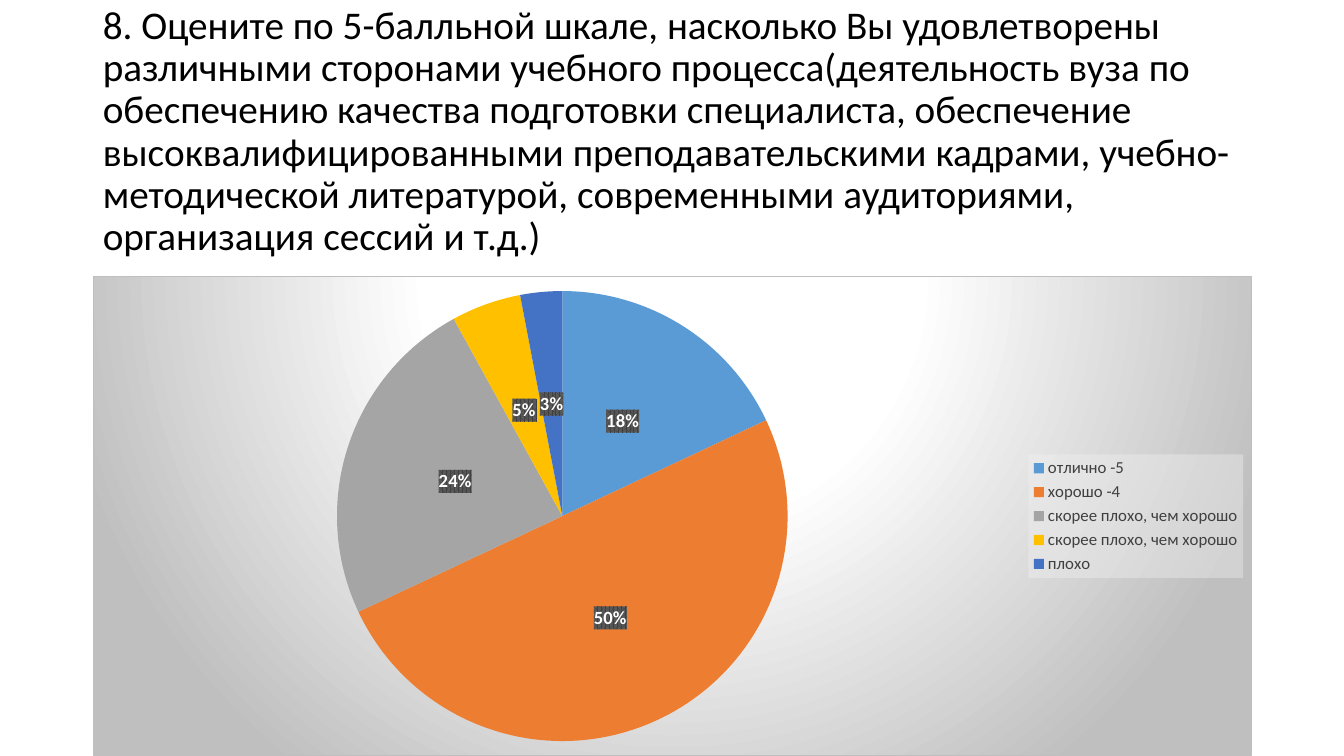
import dataclasses

import pptx
import pptx.chart.data
import pptx.dml.color
import pptx.enum.chart
import pptx.enum.text
import pptx.oxml
import pptx.oxml.ns
import pptx.util

Pt = pptx.util.Pt


@dataclasses.dataclass(frozen=True)
class Theme:
    font: str = "Calibri"
    text: str = "000000"
    legend_text: str = "404040"
    label_text: str = "FFFFFF"
    label_dark: str = "404040"
    label_light: str = "595959"
    legend_fill: str = "F2F2F2"
    panel_light: str = "FFFFFF"
    panel_dark: str = "BFBFBF"
    slices: tuple = ("5B9BD5", "ED7D31", "A5A5A5", "FFC000", "4472C4")
    title_size: float = 28
    chart_size: float = 10
    legend_size: float = 12
    label_size: float = 13.3


THEME = Theme()
LEFT, WIDTH = 66.24, 828
QUESTION = (
    "8. Оцените по 5-балльной шкале, насколько Вы удовлетворены различными "
    "сторонами учебного процесса(деятельность вуза по обеспечению качества "
    "подготовки специалиста, обеспечение высоквалифицированными "
    "преподавательскими кадрами, учебно-методической литературой, "
    "современными аудиториями, организация сессий и т.д.)"
)
ANSWERS = (
    ("отлично -5", 18),
    ("хорошо -4", 50),
    ("скорее плохо, чем хорошо", 24),
    ("скорее плохо, чем хорошо", 5),
    ("плохо", 3),
)


def rgb(color):
    return pptx.dml.color.RGBColor.from_string(color)


def style_font(font, size, color, bold=False):
    font.name = THEME.font
    font.size = Pt(size)
    font.bold = bold
    font.color.rgb = rgb(color)


def write_text(frame, text, *, size, color, align, line_spacing):
    para = frame.paragraphs[0]
    para.alignment = align
    para.line_spacing = line_spacing
    para.space_before = Pt(0)
    span = para.add_run()
    span.text = text
    style_font(span.font, size, color)


def chart_xml(tag, content):
    names = pptx.oxml.ns.nsdecls("c", "a")
    return pptx.oxml.parse_xml(f"<c:{tag} {names}>{content}</c:{tag}>")


def solid(color, alpha=100):
    return (f'<a:solidFill><a:srgbClr val="{color}">'
            f'<a:alpha val="{alpha * 1000}"/></a:srgbClr></a:solidFill>')


def add_title(page, text):
    title = page.shapes.title
    title.left, title.top = Pt(LEFT), Pt(2)
    title.width, title.height = Pt(WIDTH), Pt(185)
    frame = title.text_frame
    frame.word_wrap = True
    frame.auto_size = pptx.enum.text.MSO_AUTO_SIZE.NONE
    frame.vertical_anchor = pptx.enum.text.MSO_ANCHOR.MIDDLE
    write_text(frame, text, size=THEME.title_size, color=THEME.text,
               align=pptx.enum.text.PP_ALIGN.LEFT, line_spacing=0.9)


def fill_panel(chart):
    stops = ((0, THEME.panel_light), (39, THEME.panel_light), (100, THEME.panel_dark))
    gradient = "".join(
        f'<a:gs pos="{place * 1000}"><a:srgbClr val="{color}"/></a:gs>'
        for place, color in stops
    )
    panel = chart_xml("spPr", (
        f'<a:gradFill><a:gsLst>{gradient}</a:gsLst><a:path path="circle">'
        '<a:fillToRect l="50000" t="-80000" r="50000" b="180000"/>'
        f'</a:path></a:gradFill><a:ln w="{Pt(0.75)}">{solid(THEME.panel_dark)}</a:ln>'
    ))
    chart.element.find(pptx.oxml.ns.qn("c:chart")).addnext(panel)


def place_pie(chart, **place):
    plot_area = chart.element.find(".//" + pptx.oxml.ns.qn("c:plotArea"))
    for layout in plot_area.findall(pptx.oxml.ns.qn("c:layout")):
        plot_area.remove(layout)
    sides = "".join(f'<c:{side} val="{value}"/>' for side, value in place.items())
    plot_area.insert(0, chart_xml("layout", (
        '<c:manualLayout><c:layoutTarget val="inner"/>'
        f'<c:xMode val="edge"/><c:yMode val="edge"/>{sides}</c:manualLayout>'
    )))


def fill_behind_text(element, fill):
    text = element.find(pptx.oxml.ns.qn("c:txPr"))
    text.addprevious(chart_xml("spPr", fill))


def format_legend(chart):
    chart.has_legend = True
    legend = chart.legend
    legend.position = pptx.enum.chart.XL_LEGEND_POSITION.RIGHT
    legend.include_in_layout = False
    style_font(legend.font, THEME.legend_size, THEME.legend_text)
    fill_behind_text(legend._element, solid(THEME.legend_fill, 39))


def format_labels(series):
    labels = series.data_labels
    labels.show_percentage = True
    labels.show_value = False
    labels.number_format = "0%"
    labels.number_format_is_linked = False
    labels.position = pptx.enum.chart.XL_LABEL_POSITION.CENTER
    style_font(labels.font, THEME.label_size, THEME.label_text, bold=True)
    fill_behind_text(labels._element, (
        f'<a:pattFill prst="pct75"><a:fgClr><a:srgbClr val="{THEME.label_dark}"/></a:fgClr>'
        f'<a:bgClr><a:srgbClr val="{THEME.label_light}"/></a:bgClr></a:pattFill>'
    ))


def add_pie(page, answers):
    data = pptx.chart.data.CategoryChartData()
    data.categories = [answer for answer, share in answers]
    data.add_series("Series 1", [share for answer, share in answers])
    chart = page.shapes.add_chart(
        pptx.enum.chart.XL_CHART_TYPE.PIE,
        Pt(LEFT), Pt(197.28), Pt(WIDTH), Pt(342.72), data,
    ).chart
    chart.has_title = False
    style_font(chart.font, THEME.chart_size, THEME.text)
    plot = chart.plots[0]
    plot.vary_by_categories = True
    series = plot.series[0]
    for index, color in enumerate(THEME.slices):
        look = series.points[index].format
        look.fill.solid()
        look.fill.fore_color.rgb = rgb(color)
        look.line.fill.background()
    format_labels(series)
    format_legend(chart)
    fill_panel(chart)
    place_pie(chart, x=0.21, y=0.03, w=0.39, h=0.94)


def main():
    deck = pptx.Presentation()
    deck.slide_width, deck.slide_height = Pt(960), Pt(540)
    page = deck.slides.add_slide(deck.slide_layouts.get_by_name("Title Only"))
    add_title(page, QUESTION)
    add_pie(page, ANSWERS)
    deck.save("out.pptx")


if __name__ == "__main__":
    main()
